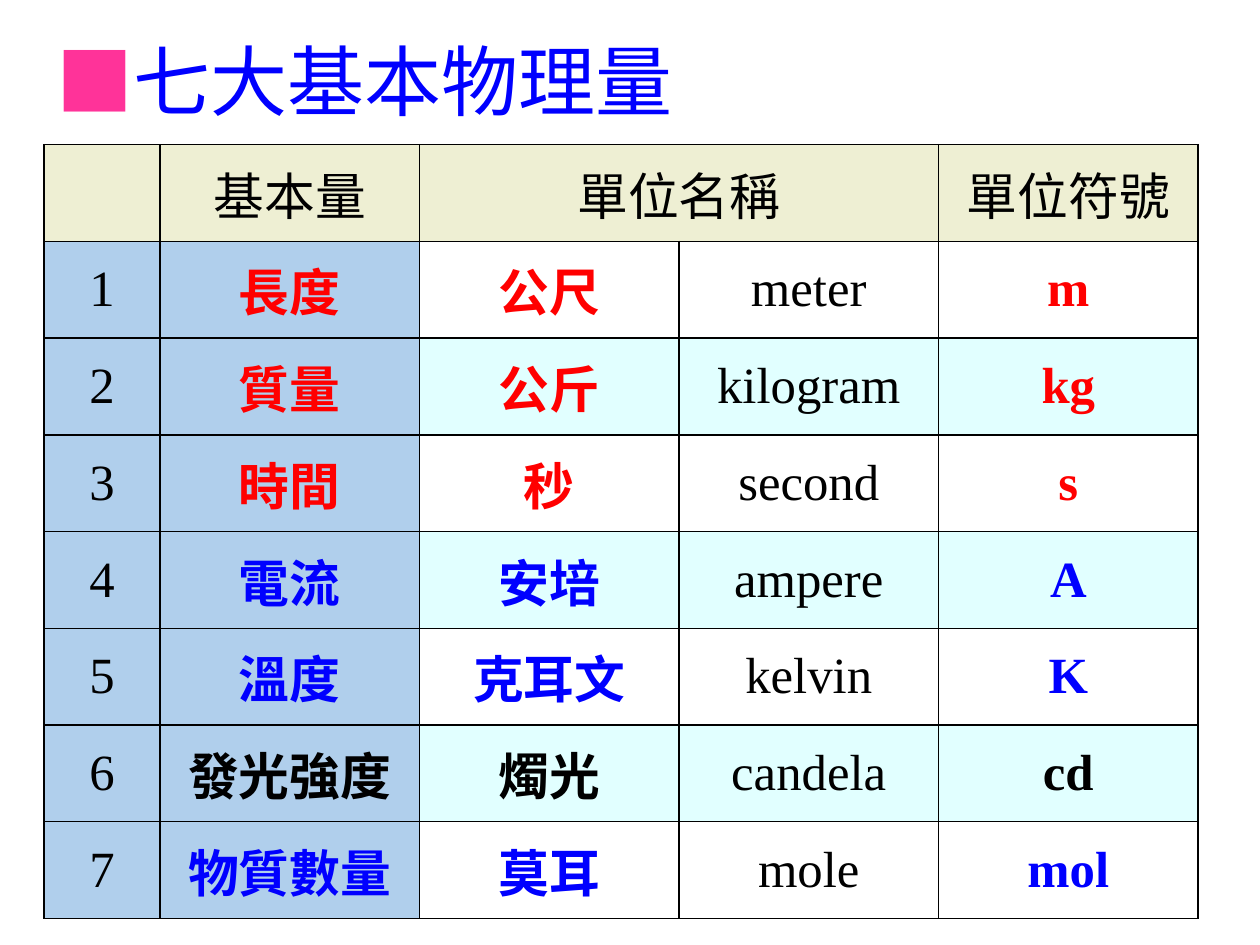
from dataclasses import dataclass

from lxml.etree import SubElement
from pptx import Presentation
from pptx.dml.color import RGBColor as Color
from pptx.enum.text import MSO_ANCHOR as Anchor, PP_ALIGN as Align
from pptx.oxml import parse_xml
from pptx.oxml.ns import nsdecls, qn
from pptx.util import Inches, Pt


@dataclass(frozen=True)
class Theme:
    black: str = "000000"
    red: str = "FF0000"
    blue: str = "0000FF"
    pink: str = "FF3399"
    white: str = "FFFFFF"
    header_fill: str = "EEEFD3"
    label_fill: str = "B0CFEC"
    band_fill: str = "E1FFFF"
    title_size: int = 44
    table_size: int = 29
    border_width: int = 1
    title_font: str = "Arial"
    header_font: str = "Noto Sans CJK SC"
    chinese_font: str = "Noto Sans CJK TC"
    latin_font: str = "Times New Roman"


class SlideBuilder:
    """Draws elements on one slide; places are shares of the slide's size."""

    def __init__(self, presentation, theme):
        self.theme = theme
        self.width = presentation.slide_width
        self.height = presentation.slide_height
        self.slide = presentation.slides.add_slide(presentation.slide_layouts[6])

    def frame(self, left, top, width, height):
        return (int(left * self.width), int(top * self.height),
                int(width * self.width), int(height * self.height))

    def run(self, paragraph, text, color, size, font, asian_font, bold=False):
        run = paragraph.add_run()
        run.text = text
        for name, value in {"size": Pt(size), "name": font, "bold": bold}.items():
            setattr(run.font, name, value)
        run.font.color.rgb = Color.from_string(color)
        SubElement(run.font._element, qn("a:ea"), typeface=asian_font)

    def title(self, parts, place):
        text_frame = self.slide.shapes.add_textbox(*self.frame(*place)).text_frame
        for name, value in {"word_wrap": True, "vertical_anchor": Anchor.MIDDLE}.items():
            setattr(text_frame, name, value)
        for text, color in parts:
            self.run(text_frame.paragraphs[0], text, color, self.theme.title_size,
                     self.theme.title_font, self.theme.header_font)

    def table(self, place, row_count, column_shares):
        table = self.slide.shapes.add_table(
            row_count, len(column_shares), *self.frame(*place)).table
        for column, share in zip(table.columns, column_shares):
            column.width = int(share * self.width)
        return table

    def cell(self, cell, fill, text="", color=None, font=None, bold=False):
        cell.fill.solid()
        cell.fill.fore_color.rgb = Color.from_string(fill)
        cell.vertical_anchor = Anchor.MIDDLE
        self.borders(cell)
        if text:
            paragraph = cell.text_frame.paragraphs[0]
            paragraph.alignment = Align.CENTER
            self.run(paragraph, text, color or self.theme.black,
                     self.theme.table_size, font, font, bold)

    def borders(self, cell):
        properties = cell._tc.get_or_add_tcPr()
        for index, side in enumerate("LRTB"):
            properties.insert(index, parse_xml(
                f'<a:ln{side} {nsdecls("a")} w="{Pt(self.theme.border_width)}">'
                f'<a:solidFill><a:srgbClr val="{self.theme.black}"/></a:solidFill>'
                f'</a:ln{side}>'))


def main():
    theme = Theme()
    presentation = Presentation()
    presentation.slide_width, presentation.slide_height = Inches(10), Inches(7.5)
    builder = SlideBuilder(presentation, theme)

    # Title with its square marker
    builder.title([("■", theme.pink), ("七大基本物理量", theme.blue)],
                  (0.035, 0.023, 0.75, 0.123))

    # Table content: quantity, Chinese unit, English unit, symbol, colour
    header = ["", "基本量", "單位名稱", "", "單位符號"]
    quantities = [
        ("長度", "公尺", "meter", "m", theme.red),
        ("質量", "公斤", "kilogram", "kg", theme.red),
        ("時間", "秒", "second", "s", theme.red),
        ("電流", "安培", "ampere", "A", theme.blue),
        ("溫度", "克耳文", "kelvin", "K", theme.blue),
        ("發光強度", "燭光", "candela", "cd", theme.black),
        ("物質數量", "莫耳", "mole", "mol", theme.blue),
    ]
    table = builder.table((0.035, 0.153, 0.917, 0.819), len(quantities) + 1,
                          [0.092] + [0.206] * 4)

    # Header row, with one heading over both unit names
    for column, text in enumerate(header):
        builder.cell(table.cell(0, column), theme.header_fill, text,
                     font=theme.header_font)
    table.cell(0, 2).merge(table.cell(0, 3))

    # One row per quantity, banded to the right of the labels
    for row, (quantity, chinese, english, symbol, color) in enumerate(quantities, 1):
        band = theme.white if row % 2 else theme.band_fill
        cells = [
            (theme.label_fill, str(row), theme.black, theme.latin_font, False),
            (theme.label_fill, quantity, color, theme.chinese_font, True),
            (band, chinese, color, theme.chinese_font, True),
            (band, english, theme.black, theme.latin_font, False),
            (band, symbol, color, theme.latin_font, True),
        ]
        for column, content in enumerate(cells):
            builder.cell(table.cell(row, column), *content)

    presentation.save("out.pptx")


if __name__ == "__main__":
    main()
